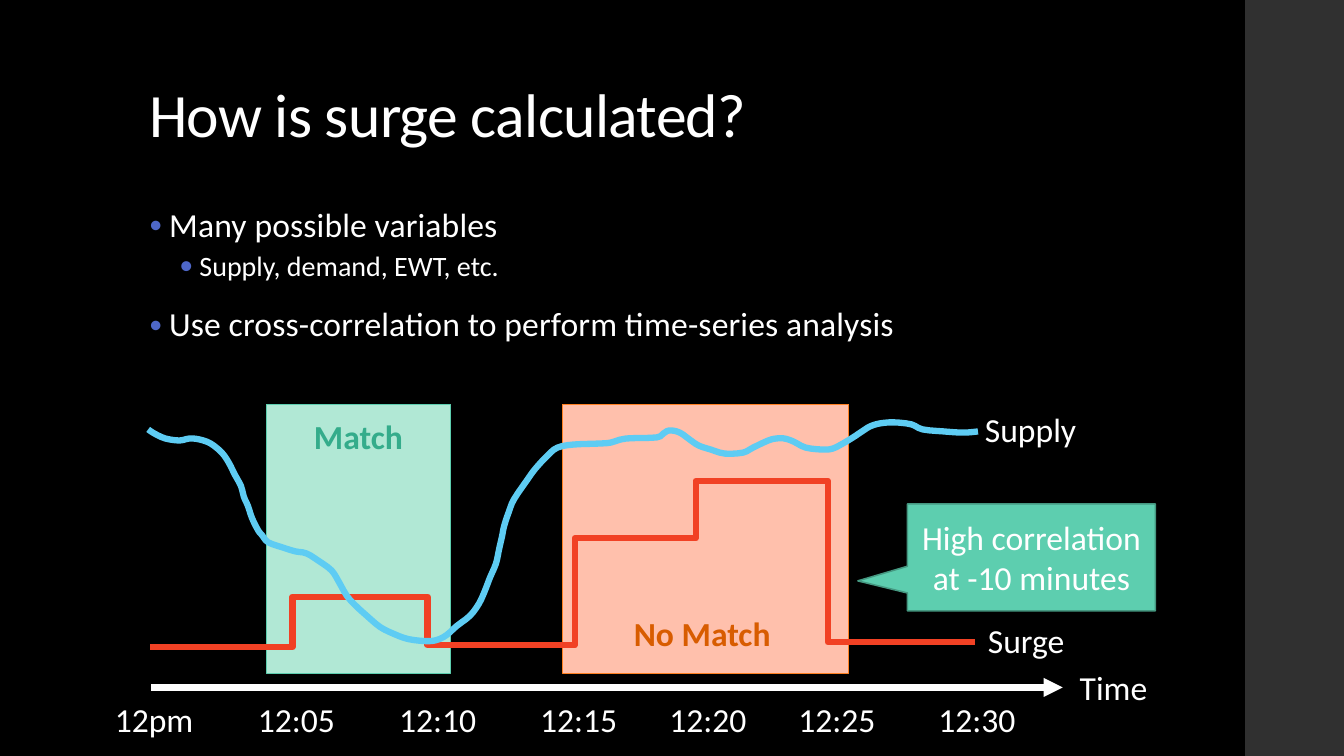
from lxml import etree
from pptx import Presentation
from pptx.dml.color import RGBColor
from pptx.enum.shapes import MSO_CONNECTOR as Connector, MSO_SHAPE as Preset
from pptx.enum.text import MSO_ANCHOR as Anchor, MSO_AUTO_SIZE as AutoSize, PP_ALIGN as Align
from pptx.oxml.ns import qn
from pptx.util import Inches, Pt

# The grid has square cells of one inch: 13.33 columns by 7.5 rows
COLUMNS, ROWS = 13.33, 7.5
FONT = "Calibri"
COLORS = {
    "background": "000000", "band": "303030", "text": "FFFFFF", "bullet": "4E67C8",
    "surge": "F14124", "supply": "5ECCF3",
    "match": "B1E8D5", "match_edge": "5DCEAF", "match_text": "34AC8B",
    "miss": "FFC0AC", "miss_edge": "FF8021", "miss_text": "D85C00",
    "callout": "5DCEAF", "callout_edge": "459881",
}

TIME_LABELS = [("12pm", 1.04), ("12:05", 2.46), ("12:10", 3.86), ("12:15", 5.26),
               ("12:20", 6.54), ("12:25", 7.82), ("12:30", 9.21)]

# Each surge step: the level and the column where it ends
SURGE_START = 1.49
SURGE_STEPS = [(6.42, 2.9), (5.92, 4.24), (6.4, 5.7), (5.34, 6.9), (4.77, 8.21), (6.37, 9.67)]

SUPPLY_POINTS = [
    (1.47, 4.26), (1.53, 4.3), (1.64, 4.35), (1.78, 4.37), (1.88, 4.35), (1.98, 4.36),
    (2.09, 4.4), (2.2, 4.49), (2.27, 4.59), (2.33, 4.71), (2.39, 4.82), (2.42, 4.93),
    (2.46, 5.02), (2.5, 5.14), (2.56, 5.26), (2.6, 5.31), (2.66, 5.38), (2.8, 5.43),
    (2.93, 5.47), (3.04, 5.49), (3.17, 5.57), (3.29, 5.66), (3.36, 5.77), (3.44, 5.91),
    (3.53, 6.01), (3.64, 6.11), (3.77, 6.22), (3.91, 6.29), (4.05, 6.34), (4.22, 6.36),
    (4.33, 6.35), (4.43, 6.3), (4.53, 6.21), (4.66, 6.11), (4.75, 5.99), (4.81, 5.86),
    (4.86, 5.73), (4.92, 5.59), (4.95, 5.45), (4.98, 5.32), (5, 5.22), (5.05, 5.07),
    (5.1, 4.95), (5.23, 4.76), (5.31, 4.65), (5.43, 4.52), (5.53, 4.44), (5.69, 4.41),
    (5.95, 4.4), (6.06, 4.39), (6.21, 4.35), (6.51, 4.34), (6.58, 4.3), (6.64, 4.27),
    (6.74, 4.29), (6.84, 4.36), (6.93, 4.42), (7.05, 4.46), (7.19, 4.5), (7.37, 4.49),
    (7.47, 4.44), (7.62, 4.37), (7.7, 4.35), (7.78, 4.35), (7.87, 4.38), (7.99, 4.44),
    (8.16, 4.46), (8.26, 4.45), (8.36, 4.4), (8.46, 4.34), (8.55, 4.28), (8.63, 4.23),
    (8.73, 4.2), (8.87, 4.19), (9.04, 4.21), (9.15, 4.26), (9.36, 4.28), (9.5, 4.29),
    (9.6, 4.29), (9.7, 4.28),
]


def cells(*lengths):
    return [Inches(length) for length in lengths]


def color(name):
    return RGBColor.from_string(COLORS[name])


def add_span(para, text, size=24, fill="text", bold=False, spacing=0):
    span = para.add_run()
    span.text = text
    span.font.name, span.font.size, span.font.bold = FONT, Pt(size), bold
    span.font.color.rgb = color(fill)
    if spacing:
        span.font._element.set("spc", str(round(spacing * 100)))


def add_block(page, left, top, width, height, fill, edge=None, weight=0.75, preset=Preset.RECTANGLE):
    block = page.shapes.add_shape(preset, *cells(left, top, width, height))
    block.shadow.inherit = False
    block.fill.solid()
    block.fill.fore_color.rgb = color(fill)
    if edge:
        block.line.color.rgb = color(edge)
        block.line.width = Pt(weight)
    else:
        block.line.fill.background()
    return block


def add_label(page, text, left, top, width, height=0.5, align=Align.LEFT, **style):
    box = page.shapes.add_textbox(*cells(left, top, width, height))
    box.text_frame.word_wrap = False
    box.text_frame.auto_size = AutoSize.SHAPE_TO_FIT_TEXT
    para = box.text_frame.paragraphs[0]
    para.alignment = align
    add_span(para, text, **style)


def add_title(page, text):
    box = page.shapes.add_textbox(*cells(1.38, 0.4, 10.6, 1.15))
    box.text_frame.word_wrap = True
    box.text_frame.vertical_anchor = Anchor.BOTTOM
    para = box.text_frame.paragraphs[0]
    para.line_spacing = 0.9
    add_span(para, text, size=44, spacing=-0.5)


def add_bullet(para, indent, share):
    props = para._p.get_or_add_pPr()
    props.set("marL", str(Inches(indent)))
    props.set("indent", str(Inches(-0.2)))
    tint = etree.SubElement(props, qn("a:buClr"))
    etree.SubElement(tint, qn("a:srgbClr"), val=COLORS["bullet"])
    etree.SubElement(props, qn("a:buSzPct"), val=str(share * 1000))
    etree.SubElement(props, qn("a:buFont"), typeface=FONT)
    etree.SubElement(props, qn("a:buChar"), char="•")


def add_bullets(page, items):
    box = page.shapes.add_textbox(*cells(1.38, 2, 9.4, 1.49))
    frame = box.text_frame
    frame.word_wrap = True
    for index, (level, text) in enumerate(items):
        para = frame.add_paragraph() if index else frame.paragraphs[0]
        para.level = level
        add_bullet(para, *((0.5, 100) if level else (0.2, 80)))
        para.line_spacing = 0.9 if level else 0.95
        para.space_before = Pt((3 if level else 14) if index else 0)
        para.space_after = Pt(3 if level else 2)
        add_span(para, text, size=20 if level else 24, spacing=0 if level else 0.1)


def add_curve(page, points, stroke):
    start, *rest = [cells(*point) for point in points]
    builder = page.shapes.build_freeform(*start)
    builder.add_line_segments(rest, close=False)
    curve = builder.convert_to_shape()
    curve.shadow.inherit = False
    curve.fill.background()
    curve.line.color.rgb = color(stroke)
    curve.line.width = Pt(4.5)


def step_points(start, steps):
    points = []
    for level, end in steps:
        points += [(start, level), (end, level)]
        start = end
    return points


def smooth_points(points, parts=3):
    """Catmull-Rom interpolation through the points."""
    padded = [points[0], *points, points[-1]]
    result = []
    for a, b, c, d in zip(padded, padded[1:], padded[2:], padded[3:]):
        for t in (part / parts for part in range(parts)):
            result.append([
                q + 0.5 * t * (r - p + t * (2 * p - 5 * q + 4 * r - s + t * (3 * (q - r) + s - p)))
                for p, q, r, s in zip(a, b, c, d)])
    return result + [points[-1]]


def add_time_axis(page):
    axis = page.shapes.add_connector(Connector.STRAIGHT, *cells(1.5, 6.82, 10.54, 6.82))
    axis.line.color.rgb = color("text")
    axis.line.width = Pt(4.5)
    etree.SubElement(axis.line._get_or_add_ln(), qn("a:tailEnd"), type="triangle")
    etree.SubElement(axis._element.spPr, qn("a:effectLst"))
    add_label(page, "Time", 10.61, 6.57, 0.88)
    for text, left in TIME_LABELS:
        add_label(page, text, left, 6.88, 1)


def add_callout(page, text):
    callout = add_block(page, 9, 5, 2.46, 1.06, "callout", "callout_edge", 1.1,
                        Preset.RECTANGULAR_CALLOUT)
    callout.adjustments[0], callout.adjustments[1] = -0.7, 0.22
    callout.text_frame.word_wrap = True
    callout.text_frame.vertical_anchor = Anchor.MIDDLE
    para = callout.text_frame.paragraphs[0]
    para.alignment = Align.CENTER
    add_span(para, text)


def main():
    deck = Presentation()
    deck.slide_width, deck.slide_height = cells(COLUMNS, ROWS)
    page = deck.slides.add_slide(deck.slide_layouts[6])
    page.background.fill.solid()
    page.background.fill.fore_color.rgb = color("background")
    add_block(page, 12.35, 0, COLUMNS - 12.35, ROWS, "band")

    # Highlighted time ranges
    add_block(page, 5.58, 4.01, 2.84, 2.67, "miss", "miss_edge")
    add_label(page, "No Match", 6.18, 6.03, 1.57, align=Align.CENTER, fill="miss_text", bold=True)
    add_block(page, 2.64, 4.01, 1.83, 2.67, "match", "match_edge")
    add_label(page, "Match", 3.01, 4.08, 1.09, align=Align.CENTER, fill="match_text", bold=True)

    # Heading and bullets
    add_title(page, "How is surge calculated?")
    add_bullets(page, [(0, "Many possible variables"),
                       (1, "Supply, demand, EWT, etc."),
                       (0, "Use cross-correlation to perform time-series analysis")])

    # Time axis and the two series
    add_time_axis(page)
    add_curve(page, step_points(SURGE_START, SURGE_STEPS), "surge")
    add_label(page, "Surge", 9.7, 6.1, 0.97)
    add_label(page, "Supply", 9.67, 4.01, 1.12)
    add_curve(page, smooth_points(SUPPLY_POINTS), "supply")

    add_callout(page, "High correlation at -10 minutes")
    deck.save("out.pptx")


if __name__ == "__main__":
    main()
